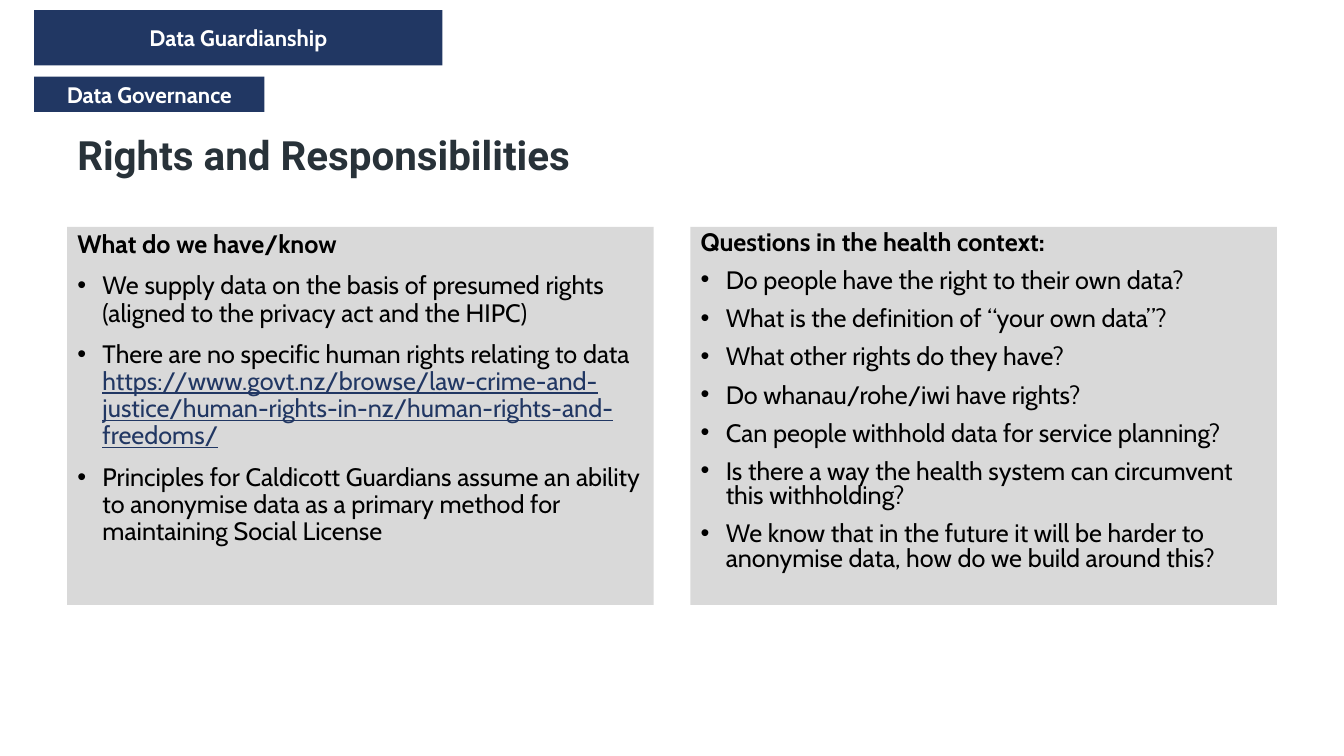
from lxml.etree import SubElement
from pptx import Presentation
from pptx.dml.color import RGBColor
from pptx.enum.shapes import MSO_SHAPE
from pptx.enum.text import MSO_ANCHOR, MSO_AUTO_SIZE, PP_ALIGN
from pptx.oxml.ns import qn
from pptx.util import Inches, Pt

WIDE, HIGH = Inches(13.33), Inches(7.5)
COLS, ROWS = 80, 75
NAVY, GREY, INK, BLACK, WHITE = "213763", "D9D9D9", "283239", "000000", "FFFFFF"
EDGE, GAP = 4, 2.2
HALF = (COLS - 2 * EDGE - GAP) / 2
LINK = "https://www.govt.nz/browse/law-crime-and-justice/human-rights-in-nz/human-rights-and-freedoms/"

BANDS = [
    ("Data Guardianship", (2.04, 1, 24.3, 5.5)),
    ("Data Governance", (2.04, 7.6, 13.7, 3.5)),
]
PANELS = [
    (0.9, "What do we have/know", [
        ["We supply data on the basis of presumed rights (aligned to the privacy act and the HIPC)"],
        ["There are no specific human rights relating to data ", LINK],
        ["Principles for Caldicott Guardians assume an ability to anonymise data as a primary method for maintaining Social License"],
    ]),
    (0.8, "Questions in the health context:", [
        ["Do people have the right to their own data?"],
        ["What is the definition of “your own data”?"],
        ["What other rights do they have?"],
        ["Do whanau/rohe/iwi have rights?"],
        ["Can people withhold data for service planning?"],
        ["Is there a way the health system can circumvent this withholding?"],
        ["We know that in the future it will be harder to anonymise data, how do we build around this?"],
    ]),
]


def apply(item, form):
    for name, value in form.items():
        setattr(item, name, value)


def paint(color, tone):
    color.rgb = RGBColor.from_string(tone)


def fill(shape, tone):
    shape.fill.solid()
    paint(shape.fill.fore_color, tone)


def span(box):
    left, top, width, height = box
    return {
        "left": int(WIDE * left / COLS), "top": int(HIGH * top / ROWS),
        "width": int(WIDE * width / COLS), "height": int(HIGH * height / ROWS),
    }


def write(para, text, tone, **form):
    run = para.add_run()
    run.text = text
    apply(run.font, form)
    paint(run.font.color, tone)


def indent(para, mark):
    props = para._p.get_or_add_pPr()
    step = Inches(0.25) if mark else 0
    props.set("marL", str(step))
    props.set("indent", str(-step))
    if mark:
        SubElement(props, qn("a:buChar")).set("char", mark)
    else:
        SubElement(props, qn("a:buNone"))


def head(shape, box):
    apply(shape, span(box))
    apply(shape.text_frame, {
        "auto_size": MSO_AUTO_SIZE.NONE, "word_wrap": True,
        "vertical_anchor": MSO_ANCHOR.MIDDLE,
    })
    para = shape.text_frame.paragraphs[0]
    apply(para, {"alignment": PP_ALIGN.LEFT, "line_spacing": 0.9})
    write(para, "Rights and Responsibilities", INK, name="Roboto", size=Pt(28.8), bold=True)


def band(slide, text, box):
    shape = slide.shapes.add_shape(MSO_SHAPE.RECTANGLE, **span(box))
    shape.shadow.inherit = False
    fill(shape, NAVY)
    shape.line.fill.background()
    apply(shape.text_frame, {"word_wrap": False, "vertical_anchor": MSO_ANCHOR.MIDDLE})
    para = shape.text_frame.paragraphs[0]
    para.alignment = PP_ALIGN.CENTER
    write(para, text, WHITE, name="Cabin", size=Pt(16), bold=True)


def panel(shape, box, pitch, label, points):
    apply(shape, span(box))
    fill(shape, GREY)
    frame = shape.text_frame
    apply(frame, {
        "auto_size": MSO_AUTO_SIZE.NONE, "word_wrap": True,
        "vertical_anchor": MSO_ANCHOR.TOP,
    })
    for row, parts in enumerate([[label], *points]):
        para = frame.add_paragraph() if row else frame.paragraphs[0]
        indent(para, "•" if row else "")
        apply(para, {"line_spacing": pitch, "space_before": Pt(10 if row else 0)})
        for text in parts:
            link = text == LINK
            write(para, text, NAVY if link else BLACK, name="Cabin",
                  size=Pt(18), bold=not row, underline=link)


def main():
    deck = Presentation()
    apply(deck, {"slide_width": WIDE, "slide_height": HIGH})
    slide = deck.slides.add_slide(deck.slide_layouts[3])
    title, *bodies = list(slide.placeholders)[:3]
    head(title, (EDGE, 12, COLS - 2 * EDGE, 7.2))
    for text, box in BANDS:
        band(slide, text, box)
    for col, (shape, data) in enumerate(zip(bodies, PANELS)):
        panel(shape, (EDGE + col * (HALF + GAP), 22.5, HALF, 37.5), *data)
    deck.save("out.pptx")


if __name__ == "__main__":
    main()
